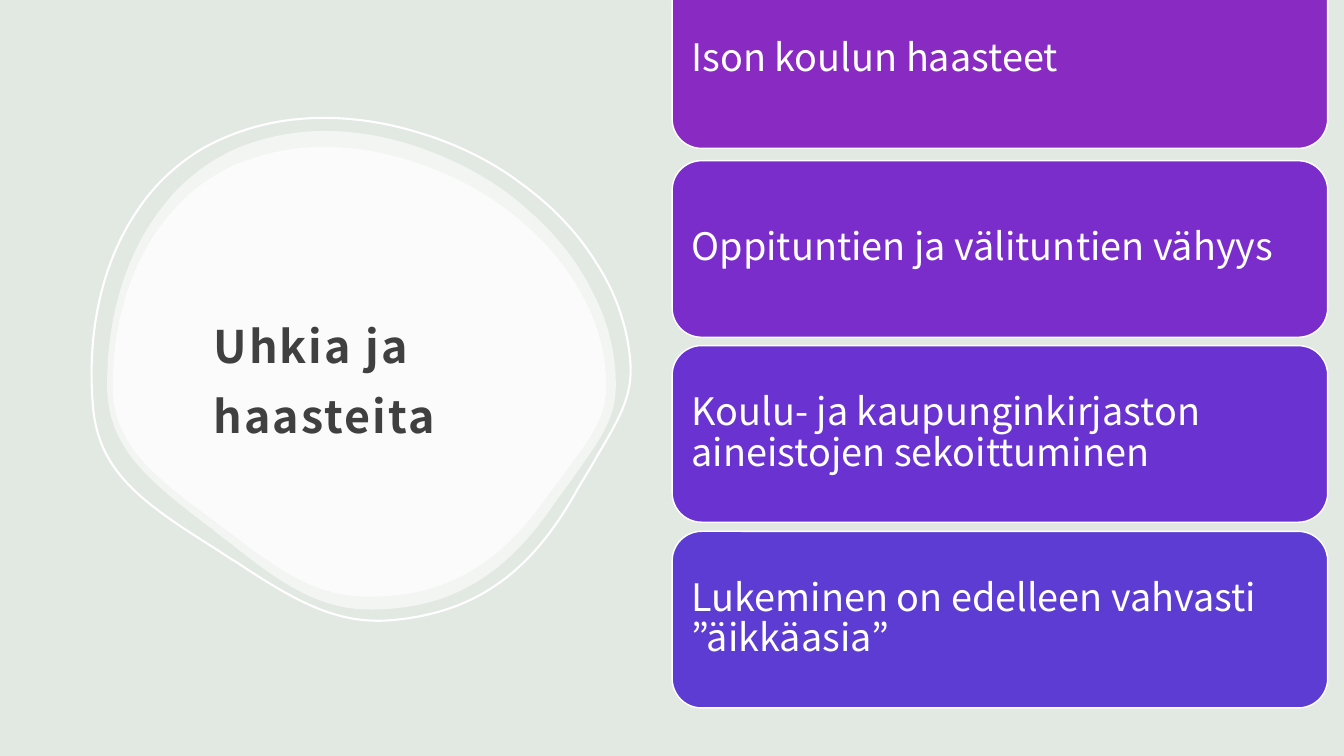
from lxml.etree import SubElement
from pptx import Presentation
from pptx.dml.color import RGBColor
from pptx.enum.shapes import MSO_SHAPE as Shape
from pptx.enum.text import MSO_ANCHOR as Anchor, PP_ALIGN as Align
from pptx.oxml.ns import qn
from pptx.util import Cm, Pt

FONT = "Noto Sans CJK JP"
COLOURS = {"background": "E2E8E2", "white": "FFFFFF", "title": "404040",
           "plum": "892BC2", "purple": "7A2DCB", "violet": "6A33D1", "indigo": "5C3CD3"}
CARDS = [
    (-0.71, "plum", "Ison koulun haasteet"),
    (4.05, "purple", "Oppituntien ja välituntien vähyys"),
    (8.71, "violet", "Koulu- ja kaupunginkirjaston aineistojen sekoittuminen"),
    (13.39, "indigo", "Lukeminen on edelleen vahvasti ”äikkäasia”"),
]
PEBBLE_START = (-0.93, -6.03)
PEBBLE_CURVES = [
    ((-1.77, -6.03), (-2.55, -5.85), (-3.24, -5.55)),
    ((-3.87, -5.25), (-4.46, -4.81), (-4.91, -4.25)),
    ((-5.88, -3.09), (-6.41, -1.46), (-6.41, 0.37)),
    ((-6.41, 1.08), (-6.21, 1.66), (-5.75, 2.25)),
    ((-5.27, 2.86), (-4.53, 3.42), (-3.77, 4)),
    ((-3.64, 4.1), (-3.49, 4.23), (-3.34, 4.33)),
    ((-2.04, 5.37), (-1.08, 6.03), (0.22, 6.03)),
    ((2.2, 6.03), (3.62, 5.22), (4.91, 3.29)),
    ((5.09, 3.04), (5.27, 2.81), (5.42, 2.58)),
    ((6.08, 1.66), (6.41, 1.18), (6.41, 0.37)),
    ((6.41, -0.44), (6.21, -1.26), (5.8, -2.02)),
    ((5.42, -2.78), (4.86, -3.47), (4.15, -4.08)),
    ((3.47, -4.69), (2.63, -5.17), (1.77, -5.5)),
    ((0.88, -5.85), (-0.04, -6.03), PEBBLE_START),
]


def colour(name):
    """Return the named colour."""
    return RGBColor.from_string(COLOURS[name])


def add_pebble(page, centre, width_scale=1, height_scale=1):
    """Draw the curved pebble outline, scaled around its centre."""
    def place(point):
        """Return the slide position of a pebble point."""
        return (Cm(centre[0] + width_scale * point[0]),
                Cm(centre[1] + height_scale * point[1]))

    builder = page.shapes.build_freeform(*place(PEBBLE_START))
    builder.add_line_segments([place(curve[-1]) for curve in PEBBLE_CURVES], close=True)
    pebble = builder.convert_to_shape()
    pebble.shadow.inherit = False
    segments = list(pebble.element.spPr.iter(qn("a:lnTo")))
    for segment, curve in zip(segments, PEBBLE_CURVES):
        segment.tag = qn("a:cubicBezTo")
        segment.clear()
        for x, y in map(place, curve):
            SubElement(segment, qn("a:pt"), x=str(x - pebble.left), y=str(y - pebble.top))
    return pebble


def fill_translucent(shape, opacity):
    """Fill a shape with see-through white and no line."""
    shape.fill.solid()
    shape.fill.fore_color.rgb = colour("white")
    shape.line.fill.background()
    tint = shape.element.spPr.find(f"{qn('a:solidFill')}/{qn('a:srgbClr')}")
    SubElement(tint, qn("a:alpha"), val=str(opacity * 1000))


def outline(shape, width):
    """Give a shape a white line."""
    shape.line.color.rgb = colour("white")
    shape.line.width = Pt(width)


def add_text(page, place, text, size, tone, spacing, insets):
    """Add one left-aligned, vertically centred paragraph and return it."""
    box = page.shapes.add_textbox(*map(Cm, place))
    frame = box.text_frame
    frame.word_wrap = True
    frame.vertical_anchor = Anchor.MIDDLE
    (frame.margin_left, frame.margin_top,
     frame.margin_right, frame.margin_bottom) = map(Cm, insets)
    para = frame.paragraphs[0]
    para.text = text
    para.alignment = Align.LEFT
    para.line_spacing = spacing
    para.font.name, para.font.size = FONT, Pt(size)
    para.font.color.rgb = colour(tone)
    return para


def add_title(page, text):
    """Add the bold, letter-spaced title."""
    para = add_text(page, (5.08, 5.29, 9.19, 8.15), text, 32, "title", 1.3,
                    (0.3, 0.3, 0.3, 0.25))
    para.font.bold = True
    para.runs[0].font.bold = True
    para.runs[0].font._element.set("spc", "150")


def add_card(page, top, tone, text):
    """Add a rounded card with its text."""
    card = page.shapes.add_shape(Shape.ROUNDED_RECTANGLE,
                                 Cm(16.94), Cm(top), Cm(16.52), Cm(4.45))
    card.shadow.inherit = False
    card.fill.solid()
    card.fill.fore_color.rgb = colour(tone)
    outline(card, 1)
    add_text(page, (17.15, top + 0.21, 16.1, 4.01), text, 27, "white", 0.9, [0.28] * 4)


def main():
    """Build the slide and save it."""
    deck = Presentation()
    deck.slide_width, deck.slide_height = Cm(33.87), Cm(19.05)
    page = deck.slides.add_slide(deck.slide_layouts[6])
    page.background.fill.solid()
    page.background.fill.fore_color.rgb = colour("background")
    fill_translucent(add_pebble(page, (9.11, 9.33)), 60)
    fill_translucent(add_pebble(page, (9.06, 9.37), 0.97, 0.94), 60)
    ring = add_pebble(page, (9.08, 9.28), 1.06, 1.06)
    ring.rotation = 355
    ring.fill.background()
    outline(ring, 1.5)
    add_title(page, "Uhkia ja haasteita")
    for top, tone, text in CARDS:
        add_card(page, top, tone, text)
    deck.save("out.pptx")


if __name__ == "__main__":
    main()
